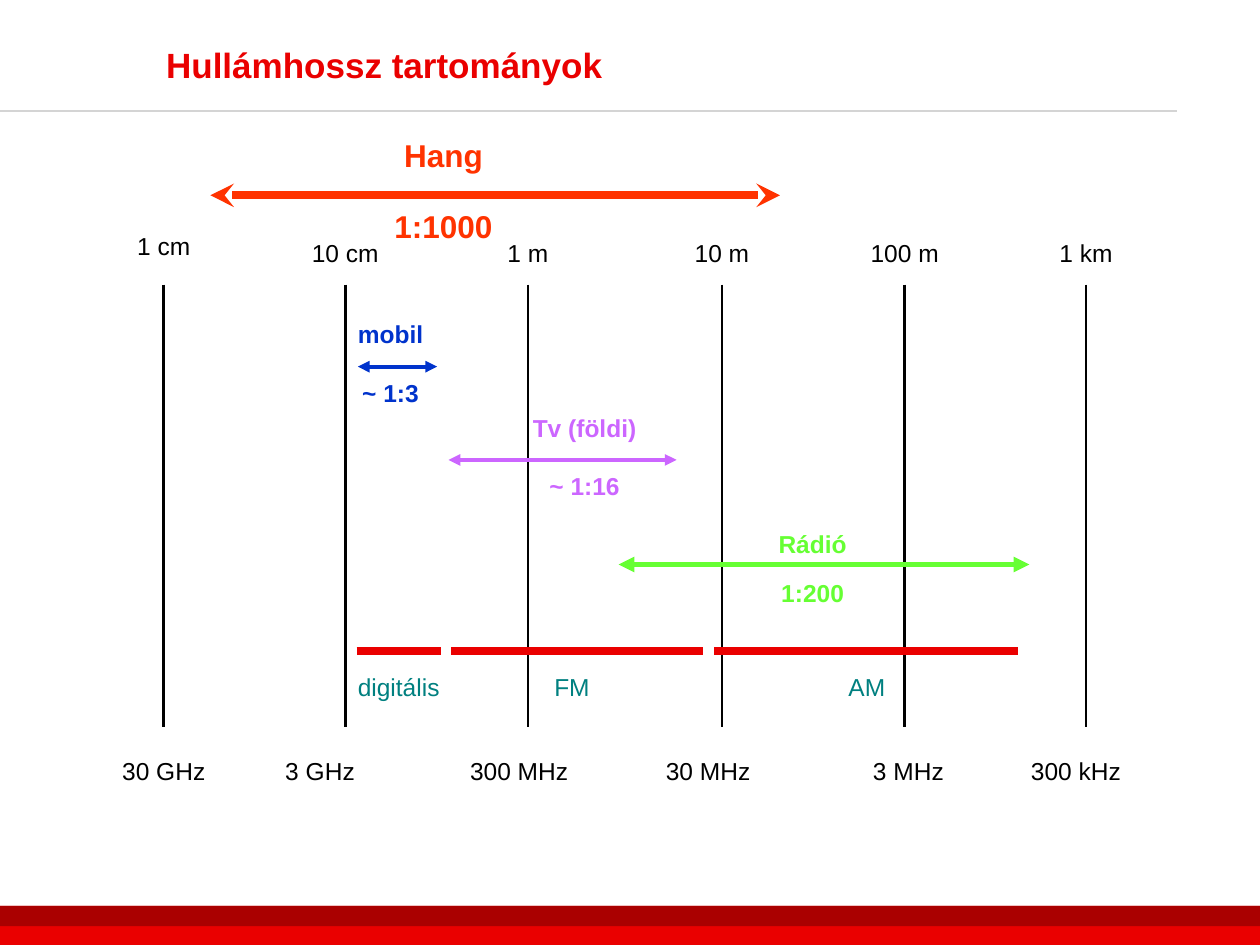
from pptx import Presentation
from pptx.dml.color import RGBColor
from pptx.enum.shapes import MSO_CONNECTOR as LINK, MSO_SHAPE as SHAPE
from pptx.enum.text import MSO_ANCHOR as ANCHOR, PP_ALIGN as ALIGN
from pptx.util import Inches, Pt
from lxml.etree import SubElement
from pptx.oxml.ns import qn

WIDE, HIGH = 10, 7.5
RED, DARK, GREY, TEAL, BLACK = "EA0000", "AA0000", "D4D4D4", "008080", "000000"

TITLE = "Hullámhossz tartományok"
# line x, wavelength, its centre x, its top, frequency, its centre x
SCALE = [
    (1.3, "1 cm", 1.3, 1.83, "30 GHz", 1.3),
    (2.74, "10 cm", 2.74, 1.89, "3 GHz", 2.54),
    (4.19, "1 m", 4.19, 1.89, "300 MHz", 4.12),
    (5.73, "10 m", 5.73, 1.89, "30 MHz", 5.62),
    (7.18, "100 m", 7.18, 1.89, "3 MHz", 7.21),
    (8.62, "1 km", 8.62, 1.89, "300 kHz", 8.54),
]
# name, ratio, arrow left, right, y, label centre x, name top, ratio top, format
SMALL = dict(size=14, width=0.9, height=0.23)
LARGE = dict(size=18, width=1.18, height=0.3)
BANDS = [
    ("mobil", "~ 1:3", 2.84, 3.47, 2.91, 3.1, 2.53, 3, "0033CC", 2.25, "triangle", SMALL),
    ("Tv (földi)", "~ 1:16", 3.56, 5.37, 3.65, 4.64, 3.28, 3.74, "CC66FF", 2.25, "triangle", SMALL),
    ("Rádió", "1:200", 4.91, 8.17, 4.48, 6.45, 4.2, 4.59, "66FF33", 3, "triangle", SMALL),
    ("Hang", "1:1000", 1.67, 6.19, 1.55, 3.52, 1.08, 1.64, "FF3300", 4.5, "stealth", LARGE),
]
# name, bar left, right, label centre x, label width
MODES = [
    ("digitális", 2.83, 3.5, 3.165, 0.67),
    ("FM", 3.58, 5.58, 4.54, 0.42),
    ("AM", 5.67, 8.08, 6.88, 0.42),
]


def rgb(code):
    return RGBColor.from_string(code)


def text(shapes, words, mid, top, width=1.09, height=0.23, size=14, color=BLACK,
         bold=False, align=ALIGN.CENTER, anchor=ANCHOR.TOP, inset=0):
    box = shapes.add_textbox(Inches(mid - width / 2), Inches(top),
                             Inches(width), Inches(height))
    frame = box.text_frame
    frame.word_wrap = True
    frame.vertical_anchor = anchor
    frame.margin_left = frame.margin_right = Inches(inset)
    frame.margin_top = frame.margin_bottom = Inches(inset / 2)
    para = frame.paragraphs[0]
    para.alignment = align
    run = para.add_run()
    run.text = words
    font = run.font
    font.name, font.size, font.bold = "Arial", Pt(size), bold
    font.color.rgb = rgb(color)


def line(shapes, x1, y1, x2, y2, color, weight, arrow=None):
    link = shapes.add_connector(LINK.STRAIGHT, Inches(x1), Inches(y1),
                                Inches(x2), Inches(y2))
    link.line.color.rgb = rgb(color)
    link.line.width = Pt(weight)
    if arrow:
        for end in ("a:headEnd", "a:tailEnd"):
            SubElement(link.line._get_or_add_ln(), qn(end), type=arrow)
    SubElement(link._element.spPr, qn("a:effectLst"))


def strip(shapes, height, color):
    """Full-width bar whose top is the top of the footer."""
    bar = shapes.add_shape(SHAPE.RECTANGLE, 0, Inches(HIGH - 0.31),
                           Inches(WIDE), Inches(height))
    bar.shadow.inherit = False
    bar.fill.solid()
    bar.fill.fore_color.rgb = rgb(color)
    bar.line.fill.background()


def main():
    deck = Presentation()
    deck.slide_width, deck.slide_height = Inches(WIDE), Inches(HIGH)
    shapes = deck.slides.add_slide(deck.slide_layouts[6]).shapes

    strip(shapes, 0.31, RED)
    strip(shapes, 0.16, DARK)
    line(shapes, 0, 0.88, 9.34, 0.88, GREY, 1.5)
    text(shapes, TITLE, 5.59, 0.08, width=8.74, height=0.87, size=20, color=RED,
         bold=True, align=ALIGN.LEFT, anchor=ANCHOR.MIDDLE, inset=0.1)

    for x, wave, wave_x, wave_y, freq, freq_x in SCALE:
        line(shapes, x, 2.26, x, 5.77, BLACK, 1.5)
        text(shapes, wave, wave_x, wave_y)
        text(shapes, freq, freq_x, 6)

    for name, ratio, left, right, y, mid, above, below, color, weight, arrow, form in BANDS:
        group = shapes.add_group_shape().shapes
        line(group, left, y, right, y, color, weight, arrow)
        for words, top in ((name, above), (ratio, below)):
            text(group, words, mid, top, color=color, bold=True, **form)

    for name, left, right, mid, width in MODES:
        line(shapes, left, 5.17, right, 5.17, RED, 4.5)
        text(shapes, name, mid, 5.33, width=width, color=TEAL)

    deck.save("out.pptx")


if __name__ == "__main__":
    main()
